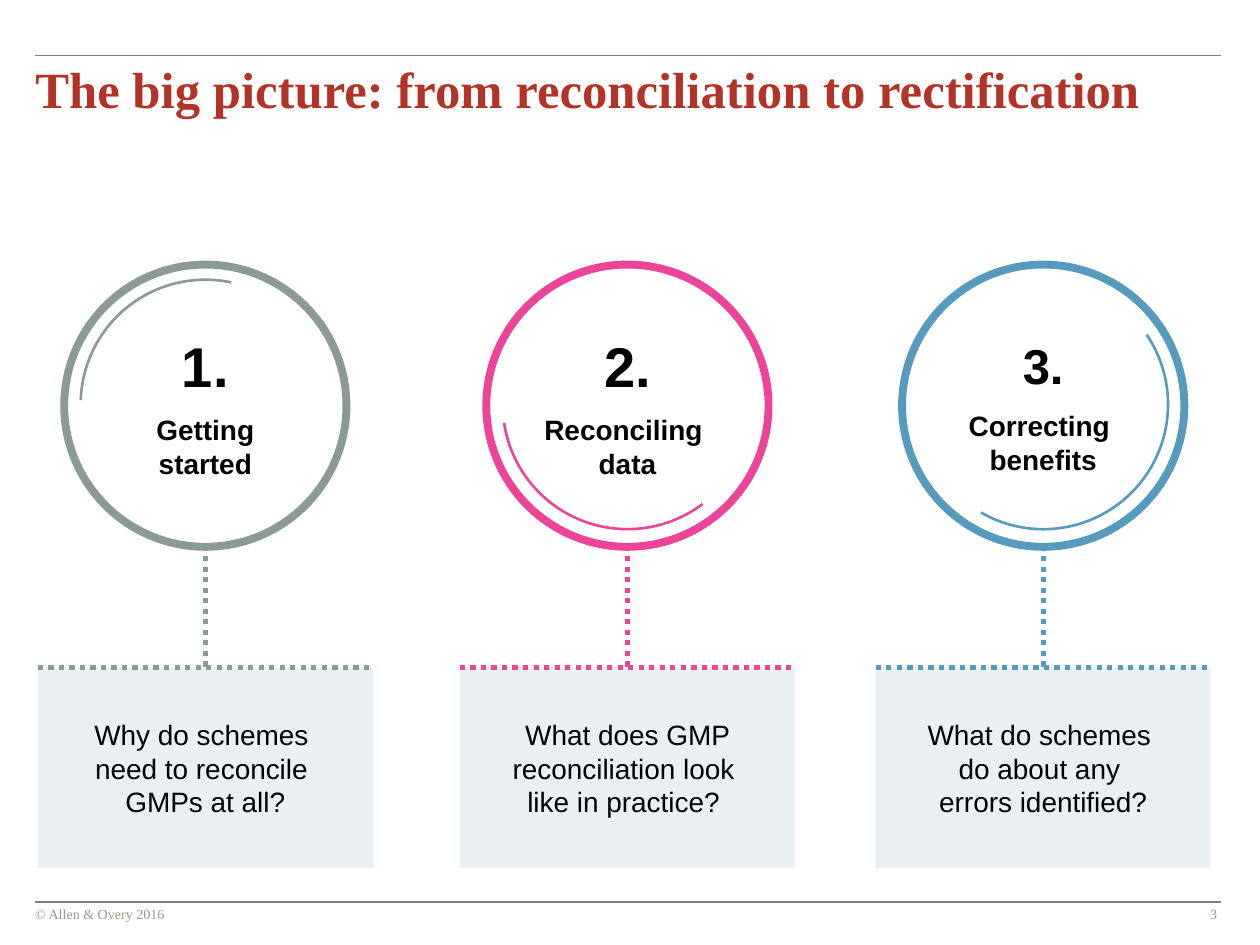
import copy

import pptx
import pptx.dml.color
import pptx.enum.dml
import pptx.enum.shapes
import pptx.enum.text
import pptx.oxml
import pptx.oxml.ns
import pptx.util

PX = 9144  # EMU per px, 100 px to the inch
COLORS = {
    "red": "B23427", "rule": "808080", "foot": "A19589", "text": "000000",
    "white": "FFFFFF", "panel": "EAEFF1",
    "sage": "8B9B93", "pink": "EB4498", "blue": "569BBE",
}
SHAPE = pptx.enum.shapes.MSO_SHAPE
ALIGN = pptx.enum.text.PP_ALIGN
ANCHOR = pptx.enum.text.MSO_ANCHOR


def rgb(name):
    return pptx.dml.color.RGBColor.from_string(COLORS[name])


def write(par, text, size=16, face="Arial", color="text", bold=False,
          align=ALIGN.CENTER, before=0):
    """Fill a paragraph; a newline in the text is a line break."""
    par.text = text
    par.alignment = align
    par.space_before = pptx.util.Pt(before)
    for run in par.runs:
        font = run.font
        font.size, font.name, font.bold = pptx.util.Pt(size), face, bold
        font.color.rgb = rgb(color)
    # Breaks take the format of the words around them
    for brk in par._p.findall(pptx.oxml.ns.qn("a:br")):
        brk.insert(0, copy.deepcopy(par.runs[0].font._rPr))


class Deck:
    serif = "Times New Roman"

    def __init__(self, wide, high):
        self.prs = pptx.Presentation()
        self.prs.slide_width, self.prs.slide_height = wide * PX, high * PX
        self.slide = self.prs.slides.add_slide(self.prs.slide_layouts[5])
        self.shapes = self.slide.shapes

    def frame(self, box, anchor=ANCHOR.TOP):
        frame = box.text_frame
        frame.margin_left = frame.margin_right = 0
        frame.margin_top = frame.margin_bottom = 0
        frame.word_wrap = True
        frame.auto_size = pptx.enum.text.MSO_AUTO_SIZE.NONE
        frame.vertical_anchor = anchor
        return frame.paragraphs[0]

    def title(self, text, x, y, w, h):
        box = self.shapes.title
        box.left, box.top, box.width, box.height = (n * PX for n in (x, y, w, h))
        write(self.frame(box), text, size=29, face=self.serif, color="red",
              bold=True, align=ALIGN.LEFT)

    def note(self, text, x, y, w, h, align):
        box = self.shapes.add_textbox(x * PX, y * PX, w * PX, h * PX)
        write(self.frame(box), text, size=8, face=self.serif, color="foot",
              align=align)

    def line(self, x1, y1, x2, y2, color, width=1, dots=False):
        line = self.shapes.add_connector(
            pptx.enum.shapes.MSO_CONNECTOR.STRAIGHT,
            x1 * PX, y1 * PX, x2 * PX, y2 * PX)
        line.line.color.rgb = rgb(color)
        line.line.width = pptx.util.Pt(width)
        if dots:
            line.line.dash_style = pptx.enum.dml.MSO_LINE.ROUND_DOT
        line._element.spPr.append(pptx.oxml.parse_xml(
            "<a:effectLst %s/>" % pptx.oxml.ns.nsdecls("a")))
        return line

    def shape(self, kind, x, y, w, h, fill=None, edge=None, width=1):
        item = self.shapes.add_shape(kind, x * PX, y * PX, w * PX, h * PX)
        item.shadow.inherit = False
        if fill:
            item.fill.solid()
            item.fill.fore_color.rgb = rgb(fill)
        else:
            item.fill.background()
        if edge:
            item.line.color.rgb = rgb(edge)
            item.line.width = pptx.util.Pt(width)
        else:
            item.line.fill.background()
        item.text_frame.vertical_anchor = ANCHOR.MIDDLE
        return item

    def ring(self, mid, color, number, size, label):
        ring = self.shape(SHAPE.OVAL, mid - 112, 210, 224, 224,
                          "white", color, 4.5)
        frame = ring.text_frame
        frame.word_wrap = False
        write(frame.paragraphs[0], number, size=size, bold=True)
        write(frame.add_paragraph(), label, bold=True, before=8)

    def arc(self, mid, color, start, end):
        arc = self.shape(SHAPE.ARC, mid - 99, 222, 198, 198,
                         edge=color, width=1.5)
        # One degree is 60000 units; an adjustment of 1 is 100000
        arc.adjustments[0], arc.adjustments[1] = start * 0.6, end * 0.6

    def panel(self, mid, color, text):
        left, top, wide = mid - 133, 530, 266
        box = self.shape(SHAPE.RECTANGLE, left, top, wide, 159, "panel")
        box.text_frame.word_wrap = True
        write(box.text_frame.paragraphs[0], text)
        stem = self.line(mid, 433, mid, top, color, 3, dots=True)
        stem.end_connect(box, 0)
        self.line(left, top, left + wide, top, color, 3, dots=True)


# Centre, colour, number, number size, label, arc start and end, question
STEPS = [
    (163, "sage", "1.", 32, "Getting\nstarted", 182, 282,
     "Why do schemes \nneed to reconcile \nGMPs at all?"),
    (498, "pink", "2.", 32, "Reconciling \ndata", 53, 171.5,
     "What does GMP reconciliation look \nlike in practice? "),
    (828, "blue", "3.", 28, "Correcting \nbenefits", 326, 120,
     "What do schemes \ndo about any \nerrors identified?"),
]


def main():
    deck = Deck(1000, 750)

    # Rules, footer and title
    for y in (44, 716):
        deck.line(28, y, 969, y, "rule")
    deck.note("© Allen & Overy 2016", 28, 719, 717, 13, ALIGN.LEFT)
    deck.note("3", 249, 719, 717, 13, ALIGN.RIGHT)
    deck.title("The big picture: from reconciliation to rectification",
               28, 46, 937, 49)

    # One column for each step
    for mid, color, number, size, label, start, end, ask in STEPS:
        deck.ring(mid, color, number, size, label)
        deck.panel(mid, color, ask)
        deck.arc(mid, color, start, end)

    deck.prs.save("out.pptx")


if __name__ == "__main__":
    main()
